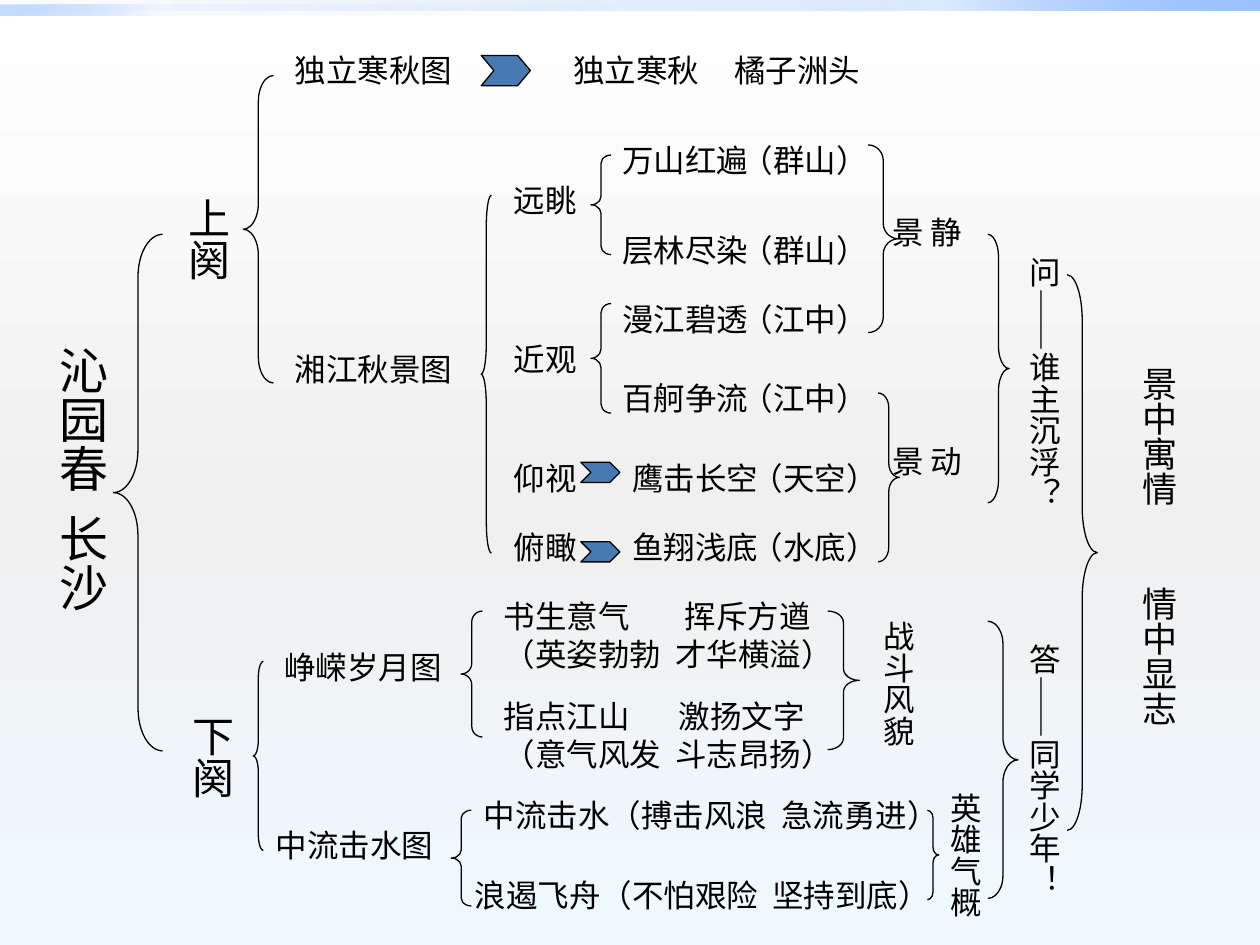
from lxml import etree
from pptx import Presentation
from pptx.dml.color import RGBColor
from pptx.enum.shapes import MSO_SHAPE as Shape
from pptx.enum.text import MSO_AUTO_SIZE as AutoSize
from pptx.oxml.ns import qn
from pptx.util import Pt

FONT = "Cambria"
BLACK = RGBColor(0x00, 0x00, 0x00)
ARROW_BLUE = RGBColor(0x47, 0x7A, 0xB1)
WHITE = RGBColor(0xFF, 0xFF, 0xFF)
GREY = RGBColor(0xF0, 0xF0, 0xF0)
ICE = RGBColor(0xEE, 0xF9, 0xFF)
DEEP_BLUE = RGBColor(0x00, 0x58, 0xB7)
MID_BLUE = RGBColor(0x4F, 0x95, 0xFF)
SKY_BLUE = RGBColor(0x9E, 0xC2, 0xFF)

ROW_H = 28.8
COL_W = 36

# left, top, width, height, curl
LEFT_BRACES = [
    (64.8, 133.9, 28.1, 295.2, 0.87),
    (139, 43.2, 17.3, 175.7, 0.86),
    (144.7, 378, 5.8, 108, 1.56),
    (275, 111.6, 5.8, 204.5, 3.02),
    (337.7, 88.6, 11.5, 56.9, 0.42),
    (337.7, 173.5, 11.5, 62.6, 0.46),
    (263.5, 349.2, 12.2, 72, 0.5),
    (257.8, 463, 11.5, 54.7, 0.4),
]
RIGHT_BRACES = [
    (496.1, 82.8, 17.3, 107.3, 0.51),
    (501.8, 224.6, 12.2, 96.5, 0.67),
    (473, 349.2, 18, 79.2, 0.37),
    (564.5, 133.9, 12.2, 153.4, 1.06),
    (564.5, 355, 17.3, 158.4, 0.75),
    (609.8, 157, 17.3, 317.5, 1.5),
    (529.9, 463, 6.5, 51.1, 0.68),
]
# left, top, width, height, notch
CHEVRONS = [
    (275, 31.7, 28.1, 17.3, 0.42),
    (331.9, 309.6, 22.3, 11.5, 0.5),
    (331.9, 264.2, 22.3, 11.5, 0.5),
]
# text, left, top, width
SCENES = [
    ("独立寒秋图", 161.3, 25.9, 105.1),
    ("湘江秋景图", 161.3, 196.6, 105.1),
    ("峥嵘岁月图", 155.5, 366.5, 105.1),
    ("中流击水图", 150.5, 468.7, 105.1),
]
VIEWS = [("远眺", 100.1), ("近观", 190.8), ("仰视", 258.5), ("俯瞰", 298.1)]
# image, place, left of image, top
IMAGES = [
    ("万山红遍", "（群山）", 348.5, 77),
    ("层林尽染", "（群山）", 348.5, 128.2),
    ("漫江碧透", "（江中）", 348.5, 167.8),
    ("百舸争流", "（江中）", 348.5, 213.1),
    ("鹰击长空", "（天空）", 354.2, 258.5),
    ("鱼翔浅底", "（水底）", 354.2, 298.1),
]
# lines with their tab stops, left, top, width
VERSES = [
    ([("独立寒秋\t橘子洲头", 92)], 320.4, 25.9, 182.2),
    ([("书生意气\t挥斥方遒", 103.5), ("（英姿勃勃\t才华横溢）", 98)],
     280.8, 337.7, 204.5),
    ([("指点江山\t激扬文字", 100), ("（意气风发\t斗志昂扬）", 98)],
     280.8, 394.6, 204.5),
    ([("中流击水（搏击风浪\t急流勇进）", 170)], 269.3, 451.4, 277.2),
    ([("浪遏飞舟（不怕艰险\t坚持到底）", 170)], 264.2, 496.8, 277.2),
]
# text, tab stop, left, top, width, height, size
COLUMNS = [
    ("沁园春\t长沙", 96, 19.4, 190.8, 48.2, 198.7, 28),
    ("上阕", None, 93.6, 105.8, 43.2, 73.4, 24),
    ("下阕", None, 95.8, 401.8, 43.2, 67.7, 24),
    ("静\t景", 26, 518.4, 116.6, COL_W, 51.8, 18),
    ("动\t景", 26, 518.4, 247.7, COL_W, 51.8, 18),
    ("战斗风貌", None, 491.8, 347.8, COL_W, 78.5, 18),
    ("英雄气概", None, 529.9, 445.7, COL_W, 78.5, 18),
    ("问——谁主沉浮？", None, 575.3, 139.7, COL_W, 153.4, 18),
    ("答——同学少年！", None, 575.3, 360.7, COL_W, 149.8, 18),
    ("景中寓情\t情中显志", 126, 639.4, 202.3, 38.2, 254.9, 20),
]


def set_gradient(parent, stops, angle):
    """Replace the solid fill of parent; stops are (position, colour, opacity) in percent."""
    grad = etree.Element(qn("a:gradFill"), rotWithShape="1")
    gs_list = etree.SubElement(grad, qn("a:gsLst"))
    for pos, color, opacity in stops:
        gs = etree.SubElement(gs_list, qn("a:gs"), pos=str(pos * 1000))
        clr = etree.SubElement(gs, qn("a:srgbClr"), val=str(color))
        if opacity < 100:
            etree.SubElement(clr, qn("a:alpha"), val=str(opacity * 1000))
    etree.SubElement(grad, qn("a:lin"), ang=str(angle * 60000), scaled="0")
    parent.replace(parent.find(qn("a:solidFill")), grad)


def add_background(slide):
    slide.background.fill.solid()
    bg = slide.element.find(".//" + qn("p:bgPr"))
    set_gradient(bg, [(0, WHITE, 100), (55, GREY, 100), (100, ICE, 100)], 90)


def add_bar(slide, top, width, stops, angle):
    s = slide.shapes.add_shape(Shape.RECTANGLE, 0, Pt(top), Pt(width), Pt(5.8))
    s.shadow.inherit = False
    s.line.fill.background()
    s.fill.solid()
    set_gradient(s.element.spPr, stops, angle)


def add_outlined(slide, kind, left, top, width, height, adj, fill=None):
    s = slide.shapes.add_shape(kind, Pt(left), Pt(top), Pt(width), Pt(height))
    s.shadow.inherit = False
    s.adjustments[0] = adj
    s.line.color.rgb = BLACK
    s.line.width = Pt(0.75)
    if fill is None:
        s.fill.background()
    else:
        s.fill.solid()
        s.fill.fore_color.rgb = fill


def add_tab_stop(p, pos):
    tabs = etree.SubElement(p._p.get_or_add_pPr(), qn("a:tabLst"))
    etree.SubElement(tabs, qn("a:tab"), pos=str(int(Pt(pos))), algn="l")


def add_text(slide, lines, left, top, width, height=ROW_H, size=18, vertical=False):
    """Add a text box; each line is (text, tab stop or None)."""
    tf = slide.shapes.add_textbox(Pt(left), Pt(top), Pt(width), Pt(height)).text_frame
    tf.word_wrap = size > 18 or any(stop for _, stop in lines)
    tf.auto_size = AutoSize.SHAPE_TO_FIT_TEXT
    if vertical:
        tf._txBody.bodyPr.set("vert", "eaVert")
    for i, (text, stop) in enumerate(lines):
        p = tf.add_paragraph() if i else tf.paragraphs[0]
        if stop:
            add_tab_stop(p, stop)
        r = p.add_run()
        r.text = text
        for name, value in {"name": FONT, "size": Pt(size)}.items():
            setattr(r.font, name, value)
        r.font.color.rgb = BLACK


def main():
    prs = Presentation()
    prs.slide_width, prs.slide_height = Pt(720), Pt(540)
    slide = prs.slides.add_slide(prs.slide_layouts[6])

    add_background(slide)
    add_bar(slide, 0, 720, [(0, DEEP_BLUE, 0), (75, MID_BLUE, 20), (100, SKY_BLUE, 100)], 315)
    add_bar(slide, 2.9, 360, [(0, DEEP_BLUE, 0), (75, MID_BLUE, 5), (100, SKY_BLUE, 60)], 135)

    for brace in LEFT_BRACES:
        add_outlined(slide, Shape.LEFT_BRACE, *brace)
    for brace in RIGHT_BRACES:
        add_outlined(slide, Shape.RIGHT_BRACE, *brace)
    for chevron in CHEVRONS:
        add_outlined(slide, Shape.CHEVRON, *chevron, fill=ARROW_BLUE)

    for text, left, top, width in SCENES:
        add_text(slide, [(text, None)], left, top, width)
    for text, top in VIEWS:
        add_text(slide, [(text, None)], 286.6, top, 50.4)
    for image, place, left, top in IMAGES:
        add_text(slide, [(image, None)], left, top, 87.1)
        add_text(slide, [(place, None)], left + 68.4, top, 87.1)
    for lines, left, top, width in VERSES:
        add_text(slide, lines, left, top, width, ROW_H + 21.6 * (len(lines) - 1))
    for text, stop, *box, size in COLUMNS:
        add_text(slide, [(text, stop)], *box, size=size, vertical=True)

    prs.save("out.pptx")


if __name__ == "__main__":
    main()
